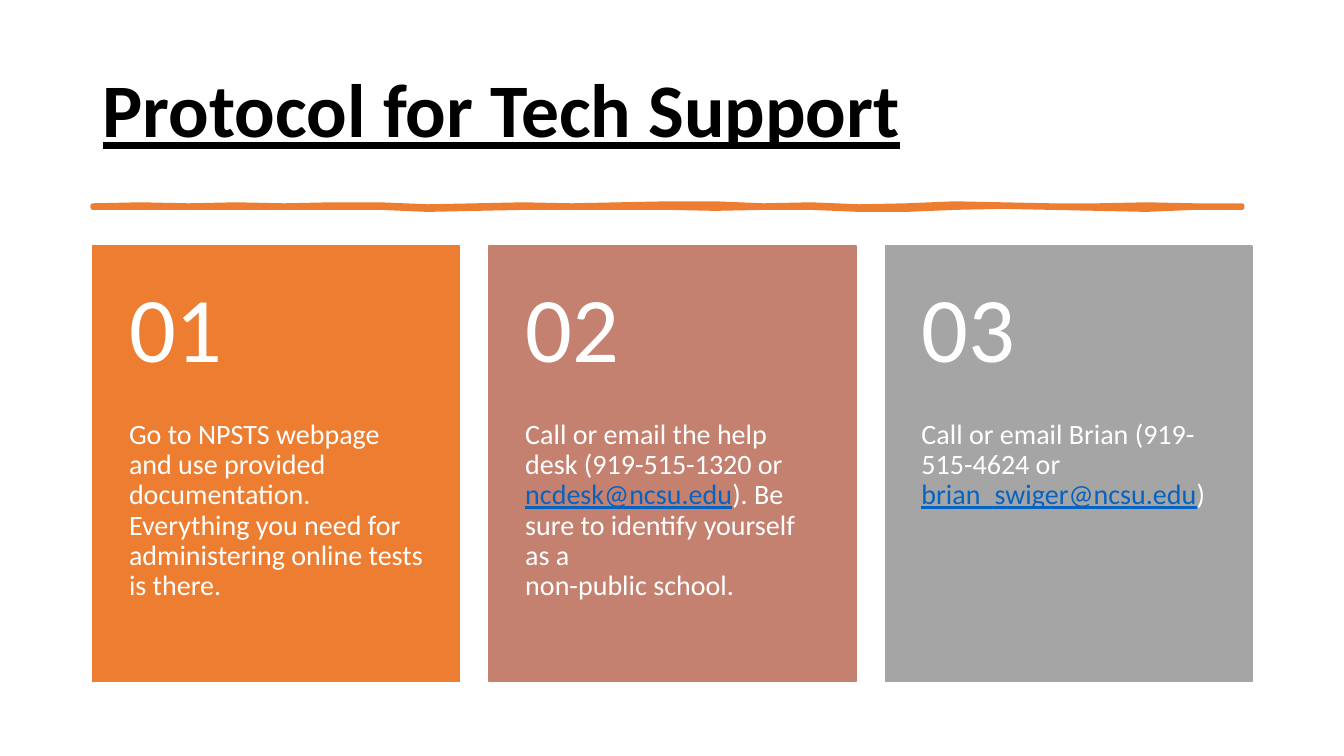
from dataclasses import dataclass

from pptx import Presentation
from pptx.dml.color import RGBColor
from pptx.enum.shapes import MSO_SHAPE
from pptx.enum.text import MSO_ANCHOR, PP_ALIGN
from pptx.util import Inches, Pt

RECTANGLE = MSO_SHAPE.RECTANGLE
TOP, MIDDLE = MSO_ANCHOR.TOP, MSO_ANCHOR.MIDDLE
LEFT = PP_ALIGN.LEFT

FONT = "Calibri"
ORANGE, ROSE, GRAY = "ED7D31", "C48170", "A5A5A5"
WHITE, BLACK, LINK_BLUE = "FFFFFF", "000000", "0563C1"

# Grid in inches
SLIDE_WIDTH, SLIDE_HEIGHT = 13.33, 7.5
MARGIN, CONTENT_WIDTH = 0.92, 11.5
CARD_TOP, CARD_WIDTH, CARD_HEIGHT = 2.44, 3.64, 4.32
COLUMN_STEP = (CONTENT_WIDTH - CARD_WIDTH) / 2
NUMBER_HEIGHT = CARD_HEIGHT * 0.4
CARD_PADDING = 0.36

# Brush stroke: edge heights in hundredths of an inch, at equal steps
STROKE_TOP, STROKE_WIDTH = 2.04, 11.4
UPPER_EDGE = [0, -1, 0, -1, 0, -1, -1, 1, 0, -1, 0, -1, -2,
              -2, 0, -1, 1, 0, -2, -1, 0, 0, -1, 0, 0]
LOWER_EDGE = [2, 2, 2, 2, 2, 2, 2, 4, 3, 2, 2, 2, 2,
              3, 2, 2, 4, 4, 2, 1, 2, 3, 4, 2, 2]


@dataclass(frozen=True)
class Card:
    number: str
    color: str
    before: str
    email: str = ""
    after: str = ""


@dataclass(frozen=True)
class Box:
    left: float
    top: float
    width: float
    height: float

    def lengths(self) -> list:
        return [Inches(n) for n in (self.left, self.top, self.width, self.height)]


CARDS = [
    Card("01", ORANGE, "Go to NPSTS webpage and use provided documentation. "
         "Everything you need for administering online tests is there."),
    Card("02", ROSE, "Call or email the help desk (919-515-1320 or ",
         "ncdesk@ncsu.edu",
         "). Be sure to identify yourself as a \nnon-public school."),
    Card("03", GRAY, "Call or email Brian (919-515-4624 or ",
         "brian_swiger@ncsu.edu", ")"),
]


def rgb(color: str) -> RGBColor:
    return RGBColor.from_string(color)


def paint(shape, color: str, line_width: float) -> None:
    shape.shadow.inherit = False
    shape.fill.solid()
    shape.fill.fore_color.rgb = rgb(color)
    shape.line.color.rgb = rgb(color)
    shape.line.width = Pt(line_width)


def add_text(slide, box: Box, text: str, size: float, color: str, anchor,
             side: float, above: float, below: float):
    """Add a one-paragraph text box and return its paragraph."""
    frame = slide.shapes.add_textbox(*box.lengths()).text_frame
    frame.word_wrap = True
    frame.vertical_anchor = anchor
    frame.margin_left = frame.margin_right = Inches(side)
    frame.margin_top, frame.margin_bottom = Inches(above), Inches(below)
    paragraph = frame.paragraphs[0]
    paragraph.text = text
    paragraph.alignment = LEFT
    paragraph.line_spacing = 0.9
    paragraph.font.name = FONT
    paragraph.font.size = Pt(size)
    paragraph.font.color.rgb = rgb(color)
    return paragraph


def add_contact(paragraph, card: Card) -> None:
    """Append the underlined e-mail address and the words after it."""
    email = paragraph.add_run()
    email.text = card.email
    email.font.color.rgb = rgb(LINK_BLUE)
    email.font.underline = True
    for index, line in enumerate(card.after.split("\n")):
        if index:
            paragraph.add_line_break()
        paragraph.add_run().text = line


def add_stroke(slide) -> None:
    step = STROKE_WIDTH / (len(UPPER_EDGE) - 1)

    def edge(heights: list[int]) -> list[tuple]:
        return [(Inches(MARGIN + step * index), Inches(STROKE_TOP + height / 100))
                for index, height in enumerate(heights)]

    outline = edge(UPPER_EDGE) + edge(LOWER_EDGE)[::-1]
    builder = slide.shapes.build_freeform(*outline[0])
    builder.add_line_segments(outline[1:], close=True)
    paint(builder.convert_to_shape(), ORANGE, 3.25)


def add_card(slide, card: Card, column: int) -> None:
    left = MARGIN + column * COLUMN_STEP
    panel = Box(left, CARD_TOP, CARD_WIDTH, CARD_HEIGHT)
    paint(slide.shapes.add_shape(RECTANGLE, *panel.lengths()), card.color, 1)

    body = Box(left, CARD_TOP + NUMBER_HEIGHT, CARD_WIDTH, CARD_HEIGHT - NUMBER_HEIGHT)
    paragraph = add_text(slide, body, card.before, 20, WHITE, TOP,
                         CARD_PADDING, 0, CARD_PADDING)
    if card.email:
        add_contact(paragraph, card)

    heading = Box(left, CARD_TOP, CARD_WIDTH, NUMBER_HEIGHT)
    add_text(slide, heading, card.number, 66, WHITE, MIDDLE,
             CARD_PADDING, CARD_PADDING / 2, CARD_PADDING / 2)


def main() -> None:
    presentation = Presentation()
    presentation.slide_width = Inches(SLIDE_WIDTH)
    presentation.slide_height = Inches(SLIDE_HEIGHT)
    slide = presentation.slides.add_slide(presentation.slide_layouts[6])

    # Title
    title = add_text(slide, Box(MARGIN, 0.4, CONTENT_WIDTH, 1.45),
                     "Protocol for Tech Support", 54, BLACK, MIDDLE, 0.1, 0.05, 0.05)
    title.font.bold = True
    title.font.underline = True

    # Brush stroke and numbered cards
    add_stroke(slide)
    for column, card in enumerate(CARDS):
        add_card(slide, card, column)

    presentation.save("out.pptx")


if __name__ == "__main__":
    main()
